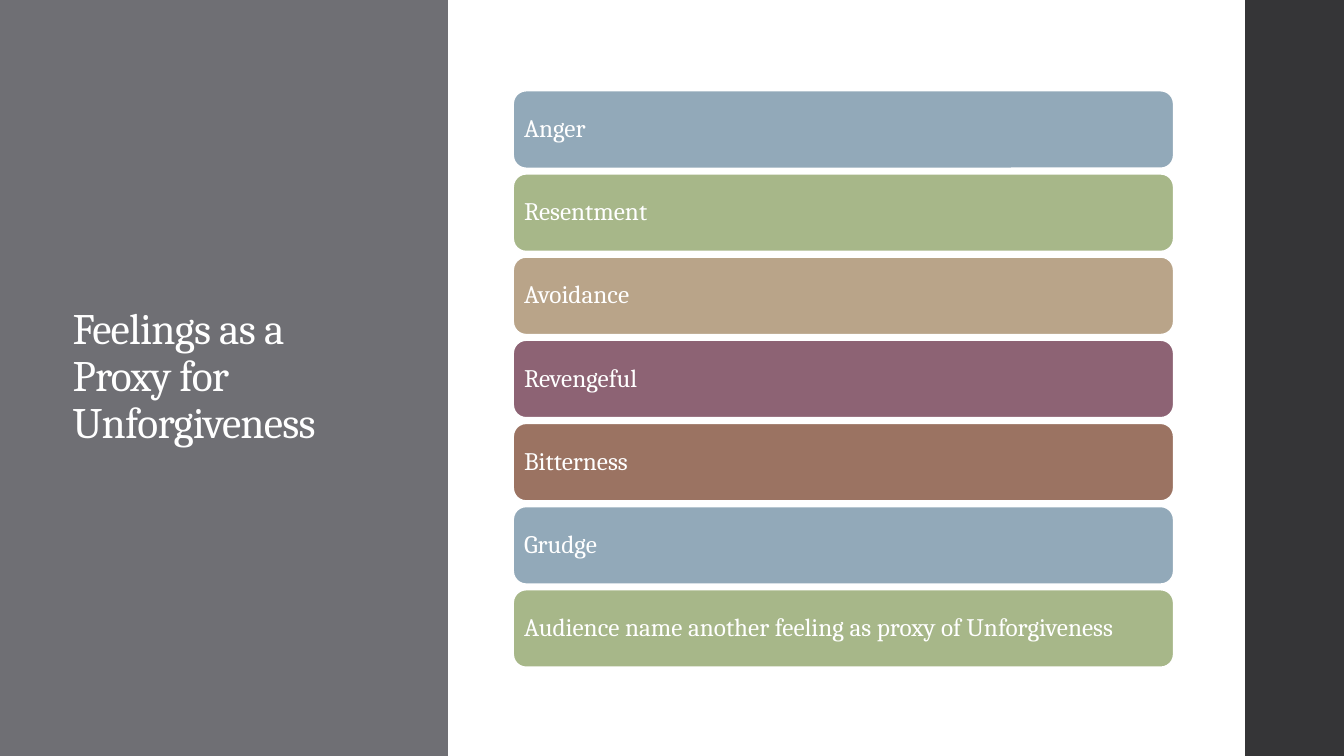
import pptx
import pptx.util
import pptx.dml.color
import pptx.enum.shapes
import pptx.enum.text

WIDE, HIGH = 13.33, 7.5
FONT = "Cambria"
WHITE = "FFFFFF"
HUES = ["92A9B9", "A7B789", "B9A489", "8D6374", "9B7362"]
WORDS = [
    "Anger",
    "Resentment",
    "Avoidance",
    "Revengeful",
    "Bitterness",
    "Grudge",
    "Audience name another feeling as proxy of Unforgiveness",
]
LEFT, TOP, WIDTH = 5.09, 0.9, 6.55
BAR, STEP = 0.77, 0.825

Inches = pptx.util.Inches
Pt = pptx.util.Pt
KIND = pptx.enum.shapes.MSO_SHAPE


def tint(code):
    return pptx.dml.color.RGBColor.from_string(code)


def block(slide, kind, box, fill):
    """Add a filled shape with neither line nor shadow."""
    shape = slide.shapes.add_shape(kind, *map(Inches, box))
    shape.shadow.inherit = False
    shape.fill.solid()
    shape.fill.fore_color.rgb = tint(fill)
    shape.line.fill.background()
    return shape


def write(shape, text, size, inset):
    """Set one left-aligned, vertically centred run of white text."""
    frame = shape.text_frame
    frame.word_wrap = True
    frame.auto_size = pptx.enum.text.MSO_AUTO_SIZE.NONE
    frame.vertical_anchor = pptx.enum.text.MSO_ANCHOR.MIDDLE
    frame.margin_left = frame.margin_right = Inches(inset)
    para = frame.paragraphs[0]
    para.alignment = pptx.enum.text.PP_ALIGN.LEFT
    para.line_spacing = 0.9
    run = para.add_run()
    run.text = text
    run.font.name = FONT
    run.font.size = Pt(size)
    run.font.color.rgb = tint(WHITE)
    return run


def head(slide, panel):
    """Place the title in front of its panel."""
    title = slide.shapes.title
    title.left, title.top, title.width, title.height = map(
        Inches, (0.62, 0.91, 2.97, 5.67))
    run = write(title, "Feelings as a Proxy for Unforgiveness", 31, 0.1)
    run.font.element.set("spc", "-50") if hasattr(run.font, "element") else \
        run._r.get_or_add_rPr().set("spc", "-50")
    panel.element.addnext(title.element)


def bars(slide):
    for row, word in enumerate(WORDS):
        box = (LEFT, TOP + row * STEP, WIDTH, BAR)
        bar = block(slide, KIND.ROUNDED_RECTANGLE, box, HUES[row % len(HUES)])
        bar.line.color.rgb = tint(WHITE)
        bar.line.width = Pt(1.1)
        write(bar, word, 18, 0.07)


def main():
    deck = pptx.Presentation()
    deck.slide_width, deck.slide_height = Inches(WIDE), Inches(HIGH)
    slide = deck.slides.add_slide(deck.slide_layouts.get_by_name("Title Only"))
    panel = block(slide, KIND.RECTANGLE, (0, 0, WIDE / 3, HIGH), "6F6F74")
    head(slide, panel)
    block(slide, KIND.RECTANGLE, (12.35, 0, WIDE - 12.35, HIGH), "353537")
    bars(slide)
    deck.save("out.pptx")


if __name__ == "__main__":
    main()
